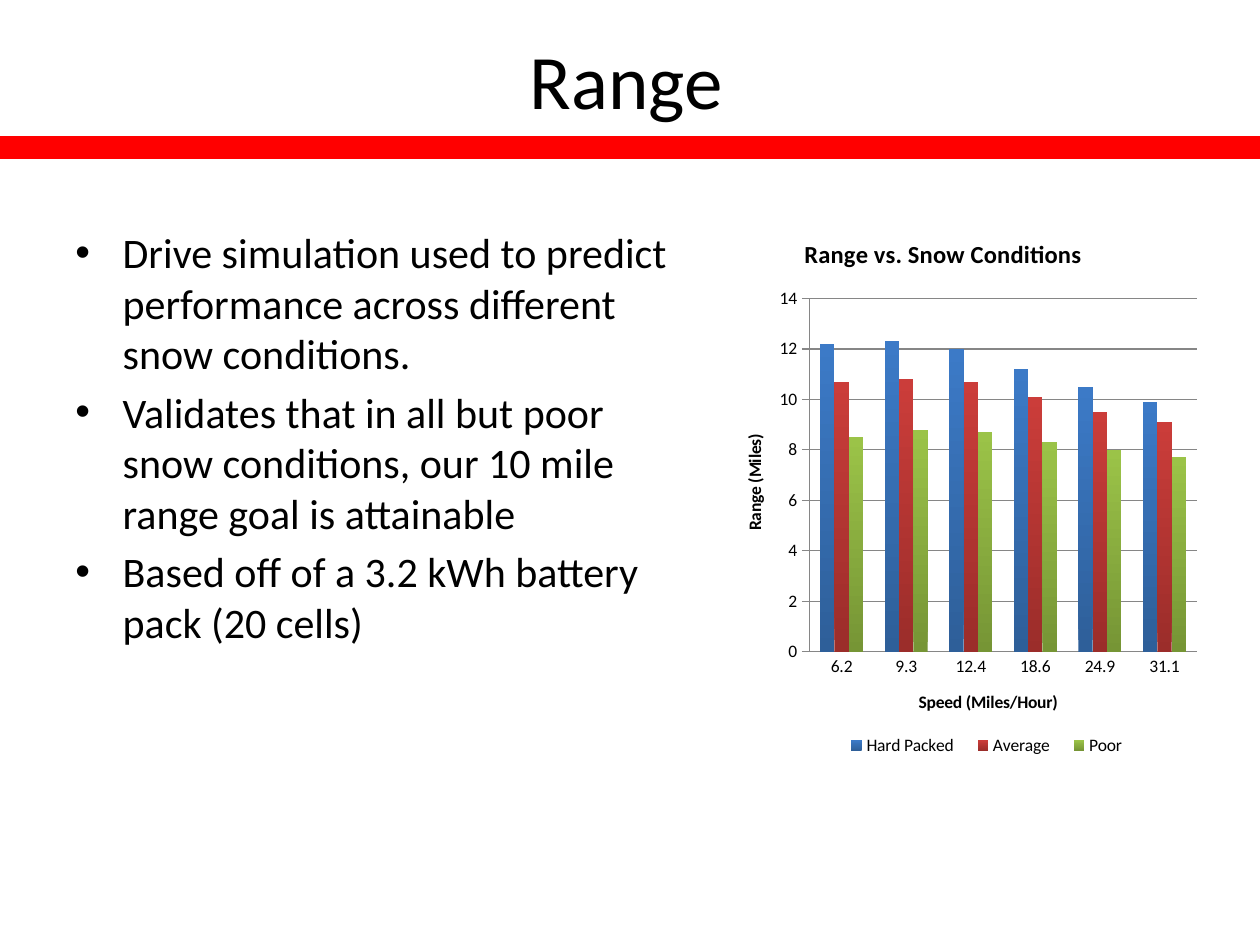
"""Build the slide on vehicle range across snow conditions."""
import pptx
import pptx.chart.data
import pptx.dml.color
import pptx.enum.chart
import pptx.enum.shapes
import pptx.enum.text
import pptx.oxml
import pptx.oxml.ns
import pptx.util

Pt = pptx.util.Pt
FONT = "Calibri"
COLORS = {"text": "000000", "band": "FF0000", "grid": "868686"}
SPEEDS = ["6.2", "9.3", "12.4", "18.6", "24.9", "31.1"]
CONDITIONS = [
    ("Hard Packed", [12.2, 12.3, 12, 11.2, 10.5, 9.9], ("2E5F99", "3C7AC7")),
    ("Average", [10.7, 10.8, 10.7, 10.1, 9.5, 9.1], ("9B2D2A", "CB3D3A")),
    ("Poor", [8.5, 8.8, 8.7, 8.3, 8, 7.7], ("769535", "9BC348")),
]
FINDINGS = [
    "Drive simulation used to predict performance across different snow conditions.",
    "Validates that in all but poor snow conditions, our 10 mile range goal is attainable",
    "Based off of a 3.2 kWh battery pack (20 cells)",
]


def rgb(name):
    return pptx.dml.color.RGBColor.from_string(COLORS.get(name, name))


def style_font(font, size, bold=False):
    font.name, font.size, font.bold = FONT, Pt(size), bold
    font.color.rgb = rgb("text")


def add_bullet(paragraph, indent):
    properties = paragraph._p.get_or_add_pPr()
    properties.set("marL", str(Pt(indent)))
    properties.set("indent", str(-Pt(indent)))
    namespace = pptx.oxml.ns.nsdecls("a")
    for tag in ('buFont typeface="Arial"', 'buChar char="•"'):
        properties.append(pptx.oxml.parse_xml(f"<a:{tag} {namespace}/>"))


def add_text(slide, lines, left, top, width, height, size=24, align="LEFT",
             anchor="TOP", indent=0, gap=0):
    frame = slide.shapes.add_textbox(Pt(left), Pt(top), Pt(width), Pt(height)).text_frame
    frame.word_wrap = True
    frame.vertical_anchor = pptx.enum.text.MSO_ANCHOR[anchor]
    for index, line in enumerate(lines):
        paragraph = frame.add_paragraph() if index else frame.paragraphs[0]
        paragraph.alignment = pptx.enum.text.PP_ALIGN[align]
        paragraph.space_before = Pt(gap if index else 0)
        if indent:
            add_bullet(paragraph, indent)
        run = paragraph.add_run()
        run.text = line
        style_font(run.font, size)


def add_band(slide, left, top, width, height):
    band = slide.shapes.add_shape(pptx.enum.shapes.MSO_SHAPE.RECTANGLE,
                                  Pt(left), Pt(top), Pt(width), Pt(height))
    band.shadow.inherit = False
    band.fill.solid()
    band.fill.fore_color.rgb = rgb("band")
    band.line.color.rgb = rgb("band")
    band.line.width = Pt(2)


def set_title(frame, text, size):
    frame.text = text
    style_font(frame.paragraphs[0].runs[0].font, size, bold=True)


def style_axis(axis, title, tick):
    set_title(axis.axis_title.text_frame, title, 10)
    axis.major_tick_mark = pptx.enum.chart.XL_TICK_MARK[tick]
    axis.minor_tick_mark = pptx.enum.chart.XL_TICK_MARK.NONE
    axis.format.line.color.rgb = rgb("grid")
    style_font(axis.tick_labels.font, 10)


def place_part(part, target="", **fractions):
    modes = "".join(f'<c:{edge}Mode val="edge"/>' for edge in "xy")
    sizes = "".join(f'<c:{key} val="{value}"/>' for key, value in fractions.items())
    layout = pptx.oxml.parse_xml(
        f'<c:layout {pptx.oxml.ns.nsdecls("c")}><c:manualLayout>'
        f'{target}{modes}{sizes}</c:manualLayout></c:layout>')
    for previous in part.findall(pptx.oxml.ns.qn("c:layout")):
        part.remove(previous)
    overlay = part.find(pptx.oxml.ns.qn("c:overlay"))
    part.insert(0 if overlay is None else part.index(overlay), layout)


def add_range_chart(slide, left, top, width, height):
    data = pptx.chart.data.CategoryChartData(number_format="0.0")
    data.categories = SPEEDS
    for name, miles, _ in CONDITIONS:
        data.add_series(name, miles)
    chart = slide.shapes.add_chart(pptx.enum.chart.XL_CHART_TYPE.COLUMN_CLUSTERED,
                                   Pt(left), Pt(top), Pt(width), Pt(height), data).chart
    style_font(chart.font, 10)
    set_title(chart.chart_title.text_frame, "Range vs. Snow Conditions", 14)
    chart.chart_title.include_in_layout = False
    chart.has_legend = True
    chart.legend.position = pptx.enum.chart.XL_LEGEND_POSITION.BOTTOM
    chart.legend.include_in_layout = False
    style_font(chart.legend.font, 10)

    speed, miles = chart.category_axis, chart.value_axis
    style_axis(speed, "Speed (Miles/Hour)", "NONE")
    style_axis(miles, "Range (Miles)", "CROSS")
    miles.axis_title.text_frame._txBody.bodyPr.set("rot", "-5400000")
    miles.minimum_scale, miles.maximum_scale, miles.major_unit = 0, 14, 2
    miles.tick_labels.number_format = "0"
    miles.tick_labels.number_format_is_linked = False
    miles.major_gridlines.format.line.color.rgb = rgb("grid")

    columns = chart.plots[0]
    columns.vary_by_categories = False
    columns.gap_width, columns.overlap = 150, 0
    for series, (_, _, shades) in zip(columns.series, CONDITIONS):
        fill = series.format.fill
        fill.gradient()
        fill.gradient_angle = 90
        for stop, shade in zip(fill.gradient_stops, shades):
            stop.color.rgb = rgb(shade)
    place_part(chart._chartSpace.chart.plotArea, '<c:layoutTarget val="inner"/>',
               x=0.15, y=0.13, w=0.82, h=0.64)
    place_part(chart.chart_title._element, x=0.13, y=0.01)
    place_part(chart.legend._element, x=0.2, y=0.9, w=0.65, h=0.08)


def main():
    deck = pptx.Presentation()
    deck.slide_width, deck.slide_height = Pt(720), Pt(540)
    slide = deck.slides.add_slide(deck.slide_layouts[6])
    add_band(slide, 0, 78.5, 720, 11.5)
    add_text(slide, ["Range"], 34, 0, 648, 90, size=44, align="CENTER", anchor="MIDDLE")
    add_text(slide, FINDINGS, 36, 126, 358, 356, indent=27, gap=4.8)
    add_range_chart(slide, 422, 129.6, 270, 315.4)
    deck.save("out.pptx")


if __name__ == "__main__":
    main()
